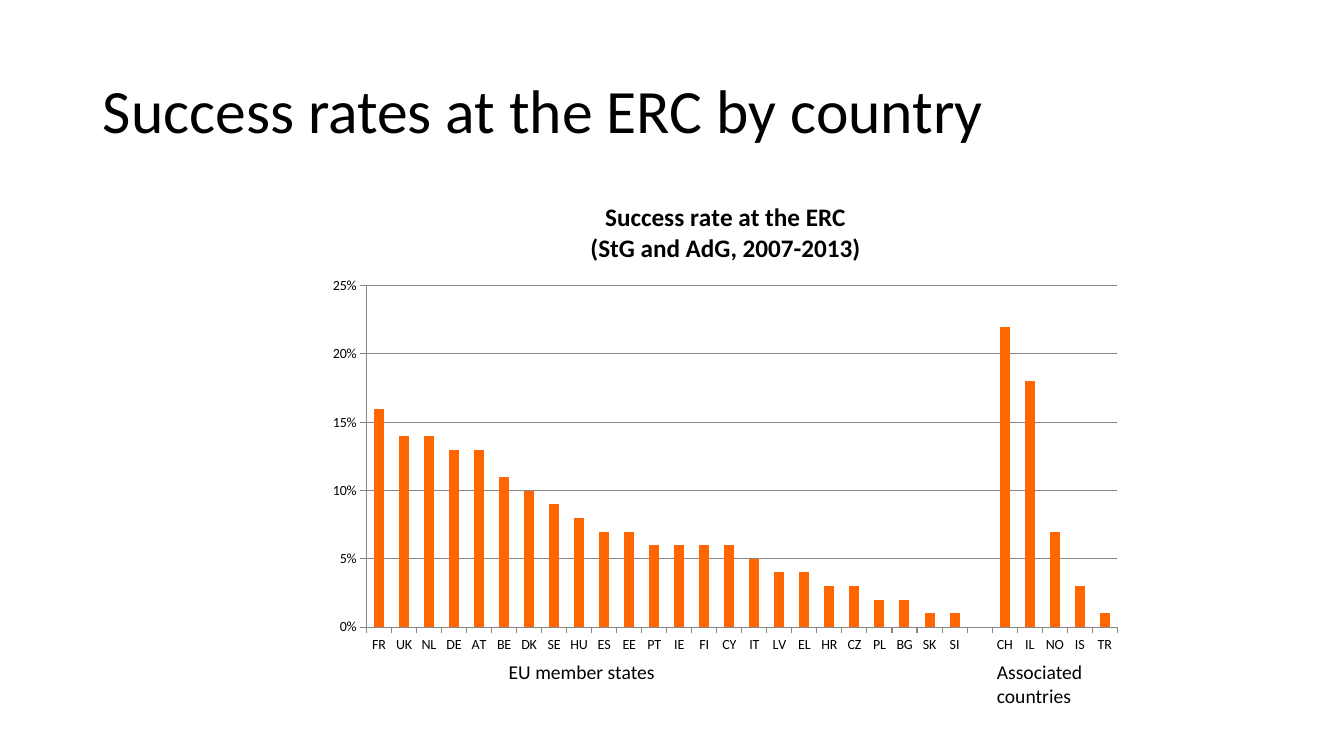
from lxml import etree
from pptx import Presentation
from pptx.chart.data import CategoryChartData
from pptx.dml.color import RGBColor
from pptx.enum.chart import XL_CHART_TYPE, XL_TICK_MARK
from pptx.enum.text import MSO_ANCHOR, MSO_AUTO_SIZE, PP_ALIGN
from pptx.oxml.ns import qn
from pptx.util import Cm, Pt

COLUMNS = XL_CHART_TYPE.COLUMN_CLUSTERED
TICK_OUT = XL_TICK_MARK.OUTSIDE
TICK_NONE = XL_TICK_MARK.NONE
MIDDLE = MSO_ANCHOR.MIDDLE
LEFT = PP_ALIGN.LEFT
NO_FIT = MSO_AUTO_SIZE.NONE
GROW = MSO_AUTO_SIZE.SHAPE_TO_FIT_TEXT

BLACK = RGBColor(0x00, 0x00, 0x00)
GRAY = RGBColor(0x86, 0x86, 0x86)
ORANGE = RGBColor(0xFF, 0x66, 0x00)

EU_RATES = {
    "FR": 16, "UK": 14, "NL": 14, "DE": 13, "AT": 13, "BE": 11, "DK": 10, "SE": 9,
    "HU": 8, "ES": 7, "EE": 7, "PT": 6, "IE": 6, "FI": 6, "CY": 6, "IT": 5,
    "LV": 4, "EL": 4, "HR": 3, "CZ": 3, "PL": 2, "BG": 2, "SK": 1, "SI": 1,
}
ASSOCIATED_RATES = {"CH": 22, "IL": 18, "NO": 7, "IS": 3, "TR": 1}


class RateSlide:
    typeface = "Calibri"

    def __init__(self, deck):
        self.slide = deck.slides.add_slide(deck.slide_layouts[5])

    def style(self, font, size, bold=False):
        font.name = self.typeface
        font.size = Pt(size)
        font.bold = bold
        font.color.rgb = BLACK

    def title(self, wording, left, top, width, height):
        heading = self.slide.shapes.title
        heading.left, heading.top = Cm(left), Cm(top)
        heading.width, heading.height = Cm(width), Cm(height)
        frame = heading.text_frame
        frame.text = wording
        frame.auto_size = NO_FIT
        frame.vertical_anchor = MIDDLE
        line = frame.paragraphs[0]
        line.alignment = LEFT
        line.line_spacing = 0.9
        self.style(line.font, 44)

    def label(self, wording, left, top, width, height):
        box = self.slide.shapes.add_textbox(Cm(left), Cm(top), Cm(width), Cm(height))
        frame = box.text_frame
        frame.word_wrap = False
        frame.auto_size = GROW
        line = frame.paragraphs[0]
        line.text = wording
        self.style(line.font, 14)

    def column_chart(self, heading, rates, left, top, width, height):
        data = CategoryChartData(number_format="0%")
        data.categories = [country for country, _ in rates]
        data.add_series("Series 1", [None if r is None else r / 100 for _, r in rates])
        chart = self.slide.shapes.add_chart(
            COLUMNS, Cm(left), Cm(top), Cm(width), Cm(height), data).chart
        self.style(chart.font, 10)
        chart.has_legend = False
        chart.has_title = True
        chart.chart_title.include_in_layout = False
        chart.chart_title.text_frame.text = heading
        for line in chart.chart_title.text_frame.paragraphs:
            self.style(line.font, 18, bold=True)

        plot = chart.plots[0]
        plot.gap_width = 150
        plot.vary_by_categories = False
        fill = plot.series[0].format.fill
        fill.solid()
        fill.fore_color.rgb = ORANGE

        countries, percent = chart.category_axis, chart.value_axis
        percent.minimum_scale, percent.maximum_scale = 0, 0.25
        percent.major_unit = 0.05
        percent.tick_labels.number_format = "0%"
        percent.tick_labels.number_format_is_linked = False
        percent.has_major_gridlines = True
        for axis in (countries, percent):
            axis.major_tick_mark = TICK_OUT
            axis.minor_tick_mark = TICK_NONE
        for ruled in (countries, percent, percent.major_gridlines):
            ruled.format.line.color.rgb = GRAY
            ruled.format.line.width = Pt(0.75)
        self.place_plot(chart, x=0.06, y=0.215, w=0.92, h=0.712)

    def place_plot(self, chart, **fractions):
        """Fix the inner plot area as fractions of the chart frame."""
        area = chart.plots[0]._element.getparent()
        layout = area.find(qn("c:layout"))
        if layout is None:
            layout = etree.Element(qn("c:layout"))
            area.insert(0, layout)
        manual = etree.SubElement(layout, qn("c:manualLayout"))
        settings = {"layoutTarget": "inner", "xMode": "edge", "yMode": "edge", **fractions}
        for tag, value in settings.items():
            etree.SubElement(manual, qn(f"c:{tag}")).set("val", str(value))


def main():
    deck = Presentation()
    deck.slide_width, deck.slide_height = Cm(33.87), Cm(19.05)
    page = RateSlide(deck)
    page.title("Success rates at the ERC by country", 2.34, 1.02, 29.21, 3.68)
    rates = [*EU_RATES.items(), ("", None), *ASSOCIATED_RATES.items()]
    page.column_chart("Success rate at the ERC\n(StG and AdG, 2007-2013)", rates,
                      8, 4.6, 20.57, 12.09)
    page.label("EU member states", 12.57, 16.51, 4.22, 0.86)
    page.label("Associated\ncountries", 24.87, 16.51, 2.69, 1.45)
    deck.save("out.pptx")


if __name__ == "__main__":
    main()
